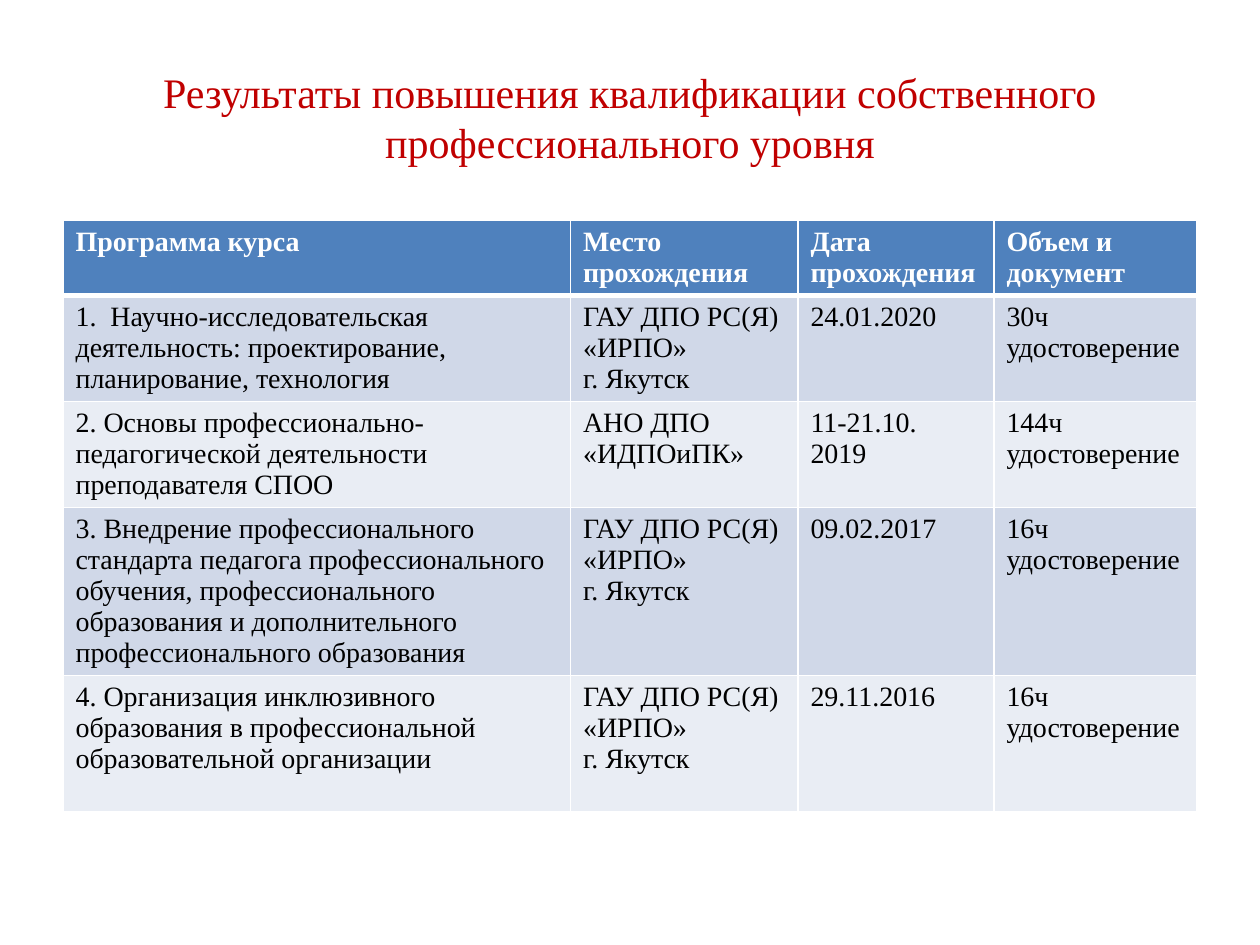
from lxml import etree
from pptx import Presentation
from pptx import util as u
from pptx.dml.color import RGBColor
from pptx.enum import text
from pptx.oxml import ns

RED = RGBColor(0xC0, 0x00, 0x00)
BLUE = RGBColor(0x4F, 0x81, 0xBD)
BAND_DARK = RGBColor(0xD0, 0xD8, 0xE8)
BAND_LIGHT = RGBColor(0xE9, 0xED, 0xF4)
WHITE = RGBColor(0xFF, 0xFF, 0xFF)
BLACK = RGBColor(0x00, 0x00, 0x00)

TITLE = "Результаты повышения квалификации собственного профессионального уровня"
COLUMN_WIDTHS = [290, 130, 112, 116]
ROW_HEIGHTS = [42.5, 60.5, 60.5, 96, 78]

# Each line break inside a cell starts a new paragraph
COURSES = [
    ["Программа курса", "Место прохождения", "Дата прохождения", "Объем и документ"],
    ["1.  Научно-исследовательская деятельность: проектирование, планирование, технология",
     "ГАУ ДПО РС(Я) «ИРПО»\nг. Якутск", "24.01.2020", "30ч\nудостоверение"],
    ["2. Основы профессионально-педагогической деятельности преподавателя СПОО",
     "АНО ДПО «ИДПОиПК»", "11-21.10.\n2019", "144ч\nудостоверение"],
    ["3. Внедрение профессионального стандарта педагога профессионального обучения, "
     "профессионального образования и дополнительного профессионального образования",
     "ГАУ ДПО РС(Я)\n«ИРПО»\nг. Якутск", "09.02.2017", "16ч\nудостоверение"],
    ["4. Организация инклюзивного образования в профессиональной образовательной организации",
     "ГАУ ДПО РС(Я)\n«ИРПО»\nг. Якутск", "29.11.2016", "16ч\nудостоверение"],
]


class SlideBuilder:
    font = "Times New Roman"
    title_size = 24
    table_size = 16

    def __init__(self, page):
        self.page = page

    def add_run(self, para, words, size, color, bold=False):
        span = para.add_run()
        span.text = words
        span.font.name = self.font
        span.font.size = u.Pt(size)
        span.font.color.rgb = color
        span.font.bold = bold

    def title(self, words, left, top, width, height):
        box = self.page.shapes.title
        box.left, box.top, box.width, box.height = map(u.Pt, (left, top, width, height))
        box.text_frame.word_wrap = True
        box.text_frame.vertical_anchor = text.MSO_ANCHOR.MIDDLE
        para = box.text_frame.paragraphs[0]
        para.alignment = text.PP_ALIGN.CENTER
        self.add_run(para, words, self.title_size, RED)

    def borders(self, cell, top, bottom):
        properties = cell._tc.get_or_add_tcPr()
        for side, width in (("L", 1), ("R", 1), ("T", top), ("B", bottom)):
            line = etree.SubElement(properties, ns.qn(f"a:ln{side}"), w=str(u.Pt(width)))
            fill = etree.SubElement(line, ns.qn("a:solidFill"))
            etree.SubElement(fill, ns.qn("a:srgbClr"), val=str(WHITE))

    def cell(self, cell, words, row):
        header = row == 0
        self.borders(cell, top=3 if row == 1 else 1, bottom=3 if header else 1)
        cell.fill.solid()
        cell.fill.fore_color.rgb = BLUE if header else (BAND_LIGHT, BAND_DARK)[row % 2]
        frame = cell.text_frame
        for index, line in enumerate(words.split("\n")):
            para = frame.add_paragraph() if index else frame.paragraphs[0]
            self.add_run(para, line, self.table_size, WHITE if header else BLACK, header)

    def table(self, rows, left, top, widths, heights):
        frame = self.page.shapes.add_table(
            len(rows), len(widths), u.Pt(left), u.Pt(top),
            u.Pt(sum(widths)), u.Pt(sum(heights)))
        grid = frame.table
        for column, width in zip(grid.columns, widths):
            column.width = u.Pt(width)
        for row, height in zip(grid.rows, heights):
            row.height = u.Pt(height)
        for row, entries in enumerate(rows):
            for column, words in enumerate(entries):
                self.cell(grid.cell(row, column), words, row)


def main():
    deck = Presentation()
    deck.slide_width, deck.slide_height = u.Pt(720), u.Pt(540)
    page = deck.slides.add_slide(deck.slide_layouts[5])
    builder = SlideBuilder(page)

    # Heading
    builder.title(TITLE, 36, 21.6, 648, 90)

    # Course list
    builder.table(COURSES, 36, 126, COLUMN_WIDTHS, ROW_HEIGHTS)

    deck.save("out.pptx")


if __name__ == "__main__":
    main()
